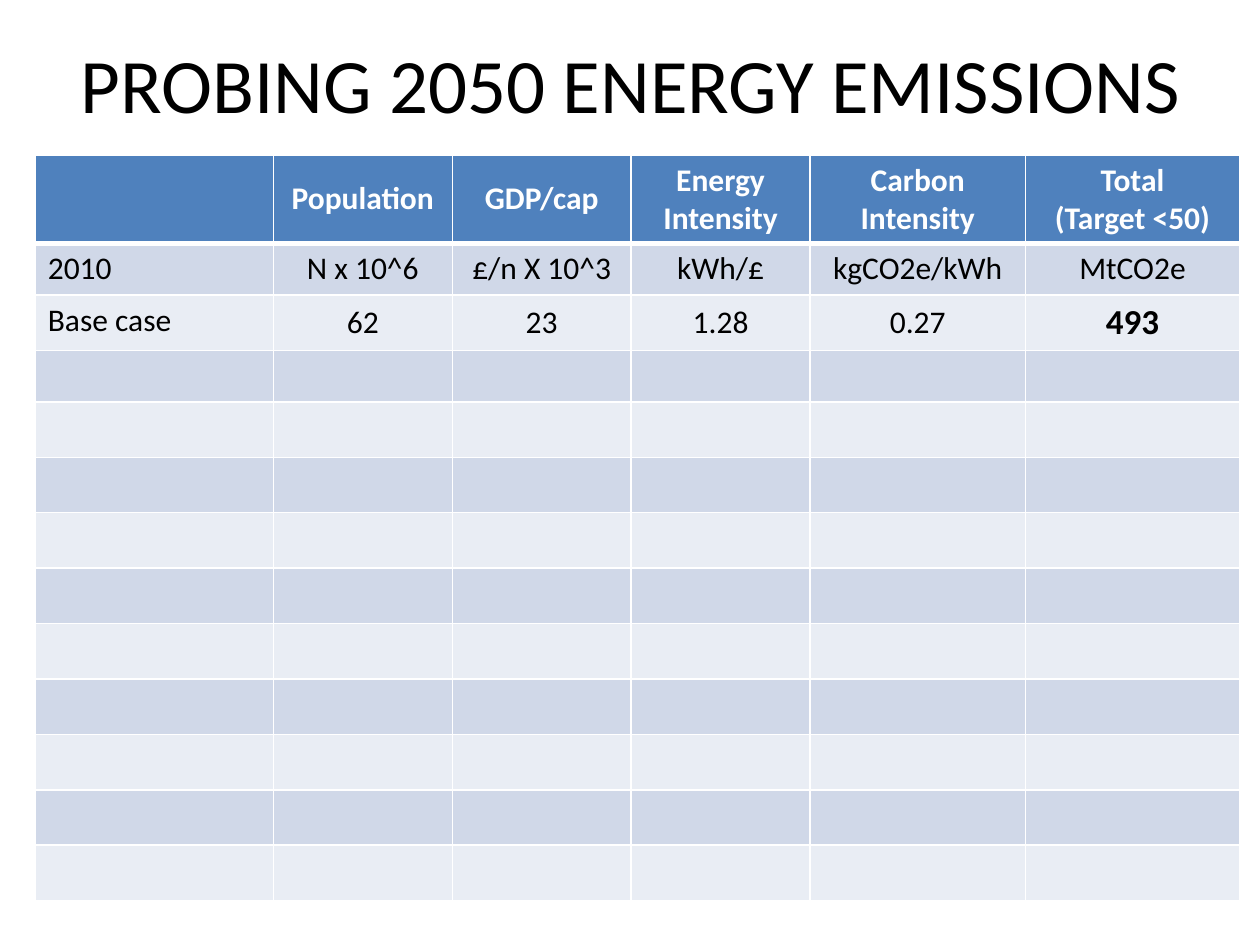
from lxml.etree import SubElement
from pptx import Presentation
from pptx.dml.color import RGBColor
from pptx.enum.text import MSO_ANCHOR, PP_ALIGN
from pptx.oxml.ns import qn
from pptx.util import Inches, Pt

BLACK = RGBColor(0x00, 0x00, 0x00)
WHITE = RGBColor(0xFF, 0xFF, 0xFF)
HEADER_BLUE = RGBColor(0x4F, 0x81, 0xBD)
BAND_DARK = RGBColor(0xD0, 0xD8, 0xE8)
BAND_LIGHT = RGBColor(0xE9, 0xED, 0xF4)

COLUMN_WIDTHS = [1.89, 1.42, 1.42, 1.42, 1.71, 1.7]
ROW_HEIGHTS = [0.7, 0.41, 0.44, 0.41] + [0.44] * 9
HEADINGS = ["", "Population", "GDP/cap", "Energy Intensity",
            "Carbon Intensity", "Total\n(Target <50)"]
UNITS = ["2010", "N x 10^6", "£/n X 10^3", "kWh/£", "kgCO2e/kWh", "MtCO2e"]
BASE_CASE = ["Base case", "62", "23", "1.28", "0.27", "493"]


def write_text(frame, text, size=18, color=BLACK, bold=False,
               align=PP_ALIGN.CENTER, anchor=MSO_ANCHOR.TOP):
    frame.word_wrap = True
    frame.vertical_anchor = anchor
    frame.text = text
    for paragraph in frame.paragraphs:
        paragraph.alignment = align
        font = paragraph.font
        font.name = "Calibri"
        font.size = Pt(size)
        font.bold = bold
        font.color.rgb = color


def set_borders(cell, top=1, bottom=1):
    properties = cell._tc.get_or_add_tcPr()
    sides = {"lnL": 1, "lnR": 1, "lnT": top, "lnB": bottom}
    for position, (side, width) in enumerate(sides.items()):
        line = SubElement(properties, qn(f"a:{side}"), w=str(Pt(width)))
        fill = SubElement(line, qn("a:solidFill"))
        SubElement(fill, qn("a:srgbClr"), val=str(WHITE))
        properties.insert(position, line)


def text_format(row, column):
    if row == 0:
        return {"color": WHITE, "bold": True, "anchor": MSO_ANCHOR.MIDDLE}
    if column == 0:
        return {"align": PP_ALIGN.LEFT}
    if row == 2 and column == len(COLUMN_WIDTHS) - 1:
        return {"size": 20, "bold": True}
    if row == 2:
        return {"anchor": MSO_ANCHOR.MIDDLE}
    return {}


def add_title(slide, left, top, width, height):
    title = slide.shapes.add_textbox(left, top, width, height)
    write_text(title.text_frame, "PROBING 2050 ENERGY EMISSIONS", size=44,
               anchor=MSO_ANCHOR.MIDDLE)


def add_emissions_table(slide, left, top, width, height):
    emissions = slide.shapes.add_table(
        len(ROW_HEIGHTS), len(COLUMN_WIDTHS), left, top, width, height).table
    for column, column_width in zip(emissions.columns, COLUMN_WIDTHS):
        column.width = int(width * column_width / sum(COLUMN_WIDTHS))
    for row, row_height in zip(emissions.rows, ROW_HEIGHTS):
        row.height = int(height * row_height / sum(ROW_HEIGHTS))

    blank_rows = [[""] * len(COLUMN_WIDTHS)] * (len(ROW_HEIGHTS) - 3)
    for r, texts in enumerate([HEADINGS, UNITS, BASE_CASE] + blank_rows):
        band = BAND_DARK if r % 2 else BAND_LIGHT
        for c, text in enumerate(texts):
            cell = emissions.cell(r, c)
            cell.fill.solid()
            cell.fill.fore_color.rgb = band if r else HEADER_BLUE
            set_borders(cell, top=3 if r == 1 else 1, bottom=1 if r else 3)
            style = text_format(r, c)
            cell.vertical_anchor = style.get("anchor", MSO_ANCHOR.TOP)
            write_text(cell.text_frame, text, **style)


def main():
    presentation = Presentation()
    presentation.slide_width = Inches(10)
    presentation.slide_height = Inches(7.5)
    slide = presentation.slides.add_slide(presentation.slide_layouts[6])
    add_title(slide, Inches(0.51), Inches(0.03), Inches(9), Inches(1.25))
    add_emissions_table(slide, Inches(0.28), Inches(1.23),
                        Inches(sum(COLUMN_WIDTHS)), Inches(sum(ROW_HEIGHTS)))
    presentation.save("out.pptx")


if __name__ == "__main__":
    main()
